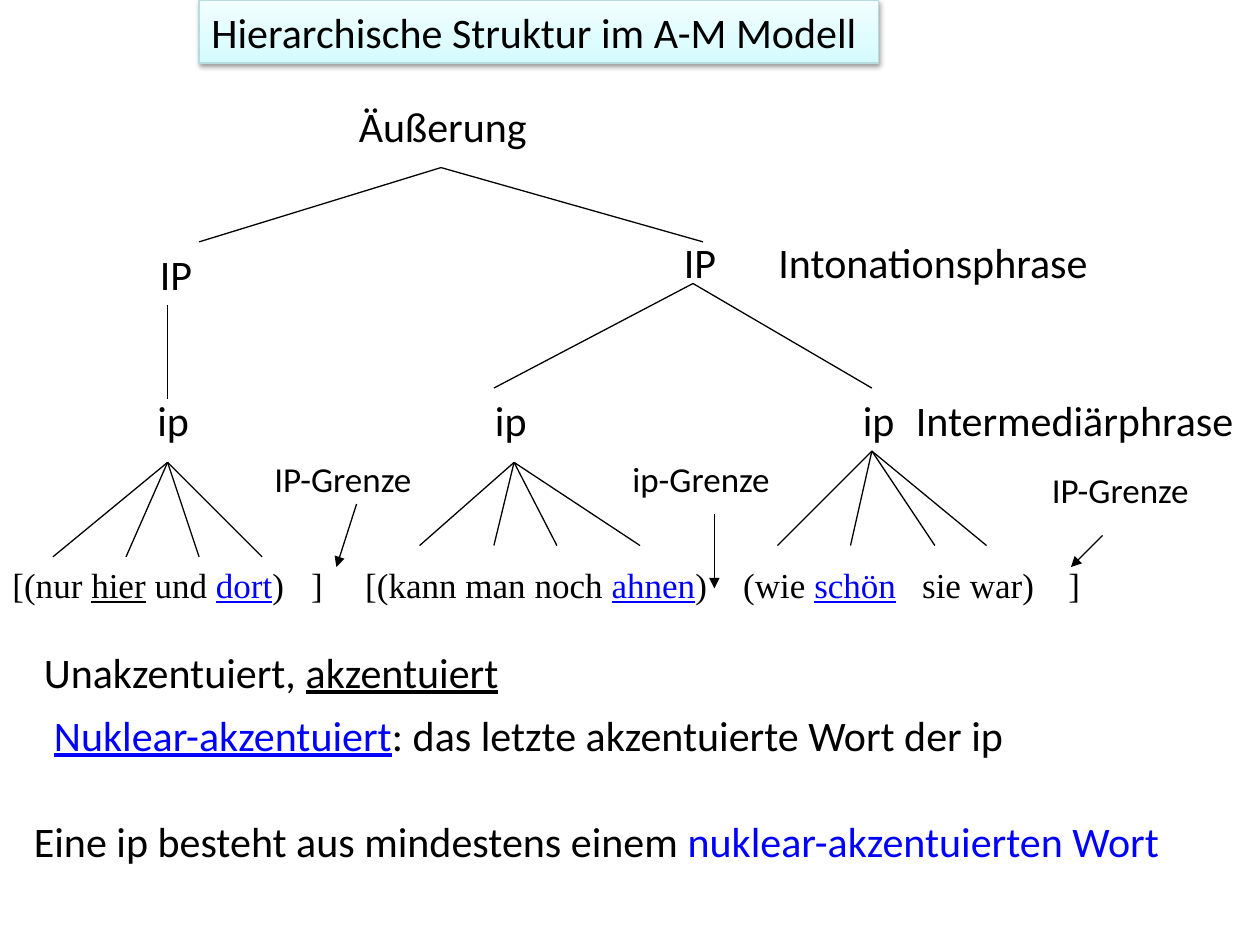
from copy import deepcopy

from lxml import etree
from pptx import Presentation
from pptx import util as u
from pptx.dml import color as col
from pptx.enum import shapes, text
from pptx.oxml import ns

HEX = {"ink": "000000", "blue": "0000FF", "edge": "B6DCDF",
       "low": "D3FBFF", "mid": "DFFCFF", "high": "F2FEFF"}
SANS, SERIF = "Calibri", "Times New Roman"


def rgb(name):
    return col.RGBColor.from_string(HEX[name])


def sub(node, tag, **attrs):
    """Add a child element in the drawing namespace."""
    return etree.SubElement(node, ns.qn(tag), attrs)


def write(shape, runs, size=24, face=SANS, wrap=False):
    """Fill a shape with runs of (words, colour, underlined)."""
    frame = shape.text_frame
    frame.word_wrap = wrap
    frame.auto_size = text.MSO_AUTO_SIZE.SHAPE_TO_FIT_TEXT
    para = frame.paragraphs[0]
    para.alignment = text.PP_ALIGN.LEFT
    for words, tint, under in runs:
        run = para.add_run()
        run.text = words
        font = run.font
        font.size, font.name = u.Pt(size), face
        font.color.rgb = rgb(tint)
        if under:
            font.underline = True
    return para


def label(slide, x, y, wide, runs, size=24, **style):
    if isinstance(runs, str):
        runs = [(runs, "ink", False)]
    high = 0.5 if size == 24 else 0.43
    box = slide.shapes.add_textbox(*map(u.Inches, (x, y, wide, high)))
    return write(box, runs, size, **style)


def line(slide, start, end, arrow=False):
    link = slide.shapes.add_connector(
        shapes.MSO_CONNECTOR.STRAIGHT, *map(u.Inches, (*start, *end)))
    link.line.color.rgb = rgb("ink")
    link.line.width = u.Pt(0.75)
    if arrow:
        sub(link.line._get_or_add_ln(), "a:tailEnd", type="triangle")
    sub(link._element.spPr, "a:effectLst")


def title(slide, x, y, wide, high):
    bar = slide.shapes.add_shape(
        shapes.MSO_SHAPE.RECTANGLE, *map(u.Inches, (x, y, wide, high)))
    bar.line.color.rgb = rgb("edge")
    bar.line.width = u.Pt(0.75)
    bar.fill.gradient()
    bar.fill.gradient_angle = 90
    first = bar.fill._fill._gradFill.gsLst[0]
    first.addnext(deepcopy(first))
    stops = zip(bar.fill.gradient_stops, (0, 0.35, 1), ("low", "mid", "high"))
    for stop, place, tint in stops:
        stop.position = place
        stop.color.rgb = rgb(tint)
    bar.shadow.inherit = False
    glow = sub(bar._element.spPr.find(ns.qn("a:effectLst")), "a:outerShdw",
               blurRad=str(u.Pt(3.1)), dist=str(u.Pt(1.6)),
               dir="5400000", rotWithShape="0")
    sub(sub(glow, "a:srgbClr", val=HEX["ink"]), "a:alpha", val="38000")
    write(bar, [("Hierarchische Struktur im A-M Modell", "ink", False)])


def tree(slide, x, y):
    """Draw the phrase tree with its top left corner at x, y."""
    nodes = [("Äußerung", 2.75, 0, 1.53),
             ("IP", 1.17, 1.17, 0.46), ("IP", 5.33, 1.08, 0.46),
             ("Intonationsphrase", 6.08, 1.08, 2.7),
             ("ip", 1.15, 2.33, 0.46), ("ip", 3.83, 2.33, 0.46),
             ("ip", 6.75, 2.33, 0.46),
             ("Intermediärphrase", 7.17, 2.33, 2.76)]
    for words, left, top, wide in nodes:
        label(slide, x + left, y + top, wide, words)

    # apex, height of the branch ends, their positions across
    fans = [((3.5, 0.58), 1.17, (1.58, 5.58)),
            ((1.33, 1.67), 2.42, (1.33,)),
            ((5.5, 1.5), 2.33, (3.92, 6.92)),
            ((1.33, 2.92), 3.67, (0.42, 1, 1.58, 2.08)),
            ((4.08, 2.92), 3.58, (3.33, 3.92, 4.42, 5.08)),
            ((6.92, 2.83), 3.58, (6.17, 6.75, 7.42, 7.83))]
    for (left, top), base, ends in fans:
        for end in ends:
            line(slide, (x + left, y + top), (x + end, y + base))


def bounds(slide, x, y):
    """Name the phrase boundaries and point to them."""
    marks = [("IP-Grenze", 0, 0, 1.34, (0.75, 0.42), (0.59, 0.92)),
             ("ip-Grenze", 2.84, 0, 1.31, (3.59, 0.5), (3.59, 1.09)),
             ("IP-Grenze", 6.17, 0.09, 1.34, (6.67, 0.67), (6.42, 0.92))]
    for words, left, top, wide, start, end in marks:
        label(slide, x + left, y + top, wide, words, size=20)
        line(slide, (x + start[0], y + start[1]),
             (x + end[0], y + end[1]), arrow=True)


def sample(slide, x, y, wide):
    """Write the example sentence, spaced by tab stops."""
    runs = [("[(nur ", "ink", False), ("hier", "ink", True),
            (" und ", "ink", False), ("dort", "blue", True),
            (")\t]\t[(kann man noch ", "ink", False), ("ahnen", "blue", True),
            (")\t(wie ", "ink", False), ("schön", "blue", True),
            ("\tsie war)\t]", "ink", False)]
    para = label(slide, x, y, wide, runs, size=20, face=SERIF, wrap=True)
    tabs = sub(para._p.get_or_add_pPr(), "a:tabLst")
    for stop in (2.37, 2.8, 5.8, 7.22, 8.38):
        sub(tabs, "a:tab", pos=str(u.Inches(stop)), algn="l")


def legend(slide, x, y):
    rows = [(0.08, 0, 3.95, [("Unakzentuiert, ", "ink", False),
                             ("akzentuiert", "ink", True)]),
            (0.16, 0.5, 8.21, [
                ("Nuklear-akzentuiert", "blue", True),
                (": das letzte akzentuierte Wort der ip", "ink", False)]),
            (0, 1.34, 9.58, [
                ("Eine ip besteht aus mindestens einem ", "ink", False),
                ("nuklear-akzentuierten Wort", "blue", False)])]
    for left, top, wide, runs in rows:
        label(slide, x + left, y + top, wide, runs, wrap=True)


def main():
    deck = Presentation()
    deck.slide_width, deck.slide_height = u.Inches(10), u.Inches(7.5)
    slide = deck.slides.add_slide(deck.slide_layouts[6])
    title(slide, 1.58, 0, 5.39, 0.5)
    sample(slide, 0, 4.42, 9.25)
    tree(slide, 0, 0.75)
    bounds(slide, 2.08, 3.58)
    legend(slide, 0.17, 5.08)
    deck.save("out.pptx")


if __name__ == "__main__":
    main()
